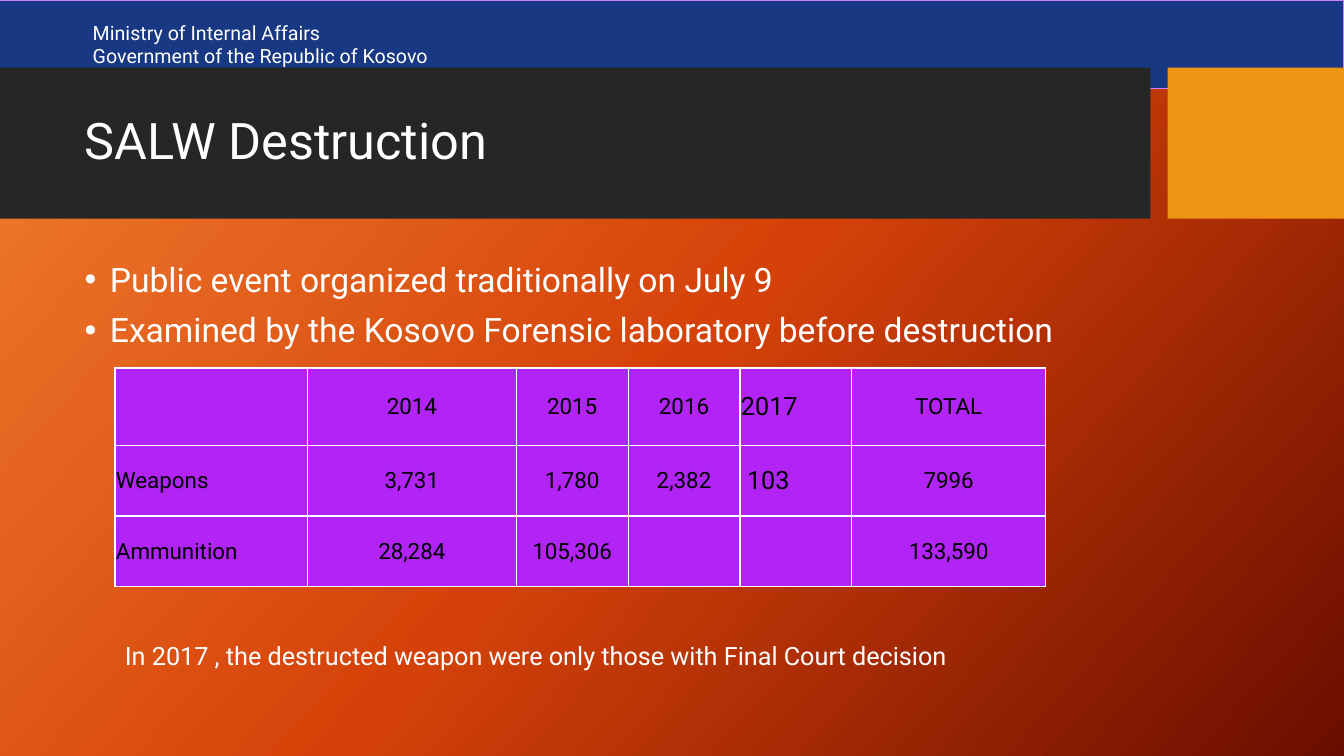
from copy import deepcopy
from dataclasses import dataclass

from lxml import etree
from pptx import Presentation
from pptx.dml.color import RGBColor
from pptx.enum.shapes import MSO_SHAPE
from pptx.enum.text import MSO_ANCHOR, MSO_AUTO_SIZE, PP_ALIGN
from pptx.oxml.ns import qn
from pptx.util import Inches, Pt

RECT = MSO_SHAPE.RECTANGLE
MIDDLE, TOP = MSO_ANCHOR.MIDDLE, MSO_ANCHOR.TOP
LEFT, CENTER, JUSTIFY = PP_ALIGN.LEFT, PP_ALIGN.CENTER, PP_ALIGN.JUSTIFY
NO_FIT, GROW = MSO_AUTO_SIZE.NONE, MSO_AUTO_SIZE.SHAPE_TO_FIT_TEXT


@dataclass(frozen=True)
class Theme:
    font: str = "Roboto"
    light: str = "FFFFFF"
    dark: str = "000000"
    header: str = "183883"
    header_line: str = "D17DF9"
    band: str = "262626"
    accent: str = "F09415"
    cell: str = "B124F5"
    gradient: tuple = ((0, "F18031"), (0.5, "D54209"), (1, "6A0D00"))
    title_size: int = 36
    body_size: int = 24
    note_size: int = 18
    cell_size: int = 16
    header_size: int = 14


def rgb(color):
    return RGBColor.from_string(color)


class SlideBuilder:
    """Adds themed elements to the current slide."""

    def __init__(self, s, theme):
        self.s, self.theme = s, theme

    def style(self, p, size, color=None, align=LEFT):
        p.alignment = align
        for r in p.runs:
            r.font.name = self.theme.font
            r.font.size = Pt(size)
            r.font.color.rgb = rgb(color or self.theme.light)

    def background(self):
        fill = self.s.background.fill
        fill.gradient()
        fill.gradient_angle = 318
        stops = next(self.s.element.iter(qn("a:gsLst")))
        stops.insert(1, deepcopy(stops[0]))
        for stop, (position, color) in zip(fill.gradient_stops, self.theme.gradient):
            stop.position = position
            stop.color.rgb = rgb(color)

    def rect(self, box, fill, line=None):
        sp = self.s.shapes.add_shape(RECT, *map(Inches, box))
        sp.shadow.inherit = False
        sp.fill.solid()
        sp.fill.fore_color.rgb = rgb(fill)
        if line:
            sp.line.color.rgb = rgb(line)
            sp.line.width = Pt(0.75)
        else:
            sp.line.fill.background()
        return sp

    def header(self, box, text):
        sp = self.rect(box, self.theme.header, self.theme.header_line)
        tf = sp.text_frame
        tf.text = text
        tf.vertical_anchor = MIDDLE
        tf.margin_left = Inches(0.92)
        for p in tf.paragraphs:
            self.style(p, self.theme.header_size)

    def placeholder(self, index, box, text, size, anchor):
        sp = self.s.placeholders[index]
        sp.left, sp.top, sp.width, sp.height = map(Inches, box)
        self.s.shapes.element.append(sp.element)
        tf = sp.text_frame
        tf.text = text
        tf.word_wrap = True
        tf.auto_size = NO_FIT
        tf.vertical_anchor = anchor
        for p in tf.paragraphs:
            p.line_spacing = 0.9
            p.space_before = Pt(0)
            self.style(p, size)
        return tf

    def title(self, box, text):
        self.placeholder(0, box, text, self.theme.title_size, MIDDLE)

    def bullets(self, box, items):
        tf = self.placeholder(1, box, "\n".join(items), self.theme.body_size, TOP)
        for i, p in enumerate(tf.paragraphs):
            p.space_before = Pt(10 if i else 0)
            pPr = p._p.get_or_add_pPr()
            pPr.set("marL", str(Inches(0.25)))
            pPr.set("indent", str(-Inches(0.25)))
            etree.SubElement(pPr, qn("a:buFont"), typeface="Arial")
            etree.SubElement(pPr, qn("a:buChar"), char="•")

    def cell(self, cell, text, size, align):
        cell.fill.solid()
        cell.fill.fore_color.rgb = rgb(self.theme.cell)
        cell.vertical_anchor = MIDDLE
        cell.margin_left = cell.margin_top = cell.margin_right = Inches(0.01)
        cell.margin_bottom = 0
        cell.text_frame.text = text
        self.style(cell.text_frame.paragraphs[0], size, self.theme.dark, align)
        tcPr = cell._tc.get_or_add_tcPr()
        for i, side in enumerate(("lnL", "lnR", "lnT", "lnB")):
            ln = etree.Element(qn(f"a:{side}"), w=str(Pt(1)))
            fill = etree.SubElement(ln, qn("a:solidFill"))
            etree.SubElement(fill, qn("a:srgbClr"), val=self.theme.light)
            tcPr.insert(i, ln)

    def table(self, box, widths, heights, rows, large_column):
        table = self.s.shapes.add_table(len(rows), len(widths), *map(Inches, box)).table
        for column, width in zip(table.columns, widths):
            column.width = Inches(width)
        for row, height in zip(table.rows, heights):
            row.height = Inches(height)
        for i, values in enumerate(rows):
            for j, text in enumerate(values):
                large = j == large_column
                align = JUSTIFY if j == 0 else LEFT if large else CENTER
                size = self.theme.note_size if large else self.theme.cell_size
                self.cell(table.cell(i, j), text, size, align)
        return table

    def note(self, box, text):
        tf = self.s.shapes.add_textbox(*map(Inches, box)).text_frame
        tf.text = text
        tf.word_wrap = False
        tf.auto_size = GROW
        self.style(tf.paragraphs[0], self.theme.note_size)


def main():
    prs = Presentation()
    prs.slide_width, prs.slide_height = Inches(13.33), Inches(7.5)
    theme = Theme()
    slide = SlideBuilder(prs.slides.add_slide(prs.slide_layouts[1]), theme)
    slide.background()
    slide.header((0, 0, 13.33, 0.88),
                 "Ministry of Internal Affairs\nGovernment of the Republic of Kosovo")
    slide.rect((0, 0.67, 11.41, 1.5), theme.band)
    slide.rect((11.58, 0.67, 1.75, 1.5), theme.accent)
    slide.title((0.74, 0.83, 10.51, 1.18), "SALW Destruction")
    slide.bullets((0.74, 2.56, 11.09, 4.15), [
        "Public event organized traditionally on July 9",
        "Examined by the Kosovo Forensic laboratory before destruction",
    ])
    table = slide.table(
        (1.14, 3.65, 9.24, 2.17),
        (1.91, 2.07, 1.11, 1.11, 1.11, 1.92),
        (0.77, 0.7, 0.7),
        [
            ("", "2014", "2015", "2016", "2017", "TOTAL"),
            ("Weapons", "3,731", "1,780", "2,382", "103", "7996"),
            ("Ammunition", "28,284", "105,306", "", "", "133,590"),
        ],
        large_column=4,
    )
    table.cell(1, 4).margin_left = Inches(0.07)
    slide.note((1.14, 6.3, 8.78, 0.4),
               "In 2017 , the destructed weapon were only those with Final Court decision")
    prs.save("out.pptx")


if __name__ == "__main__":
    main()
